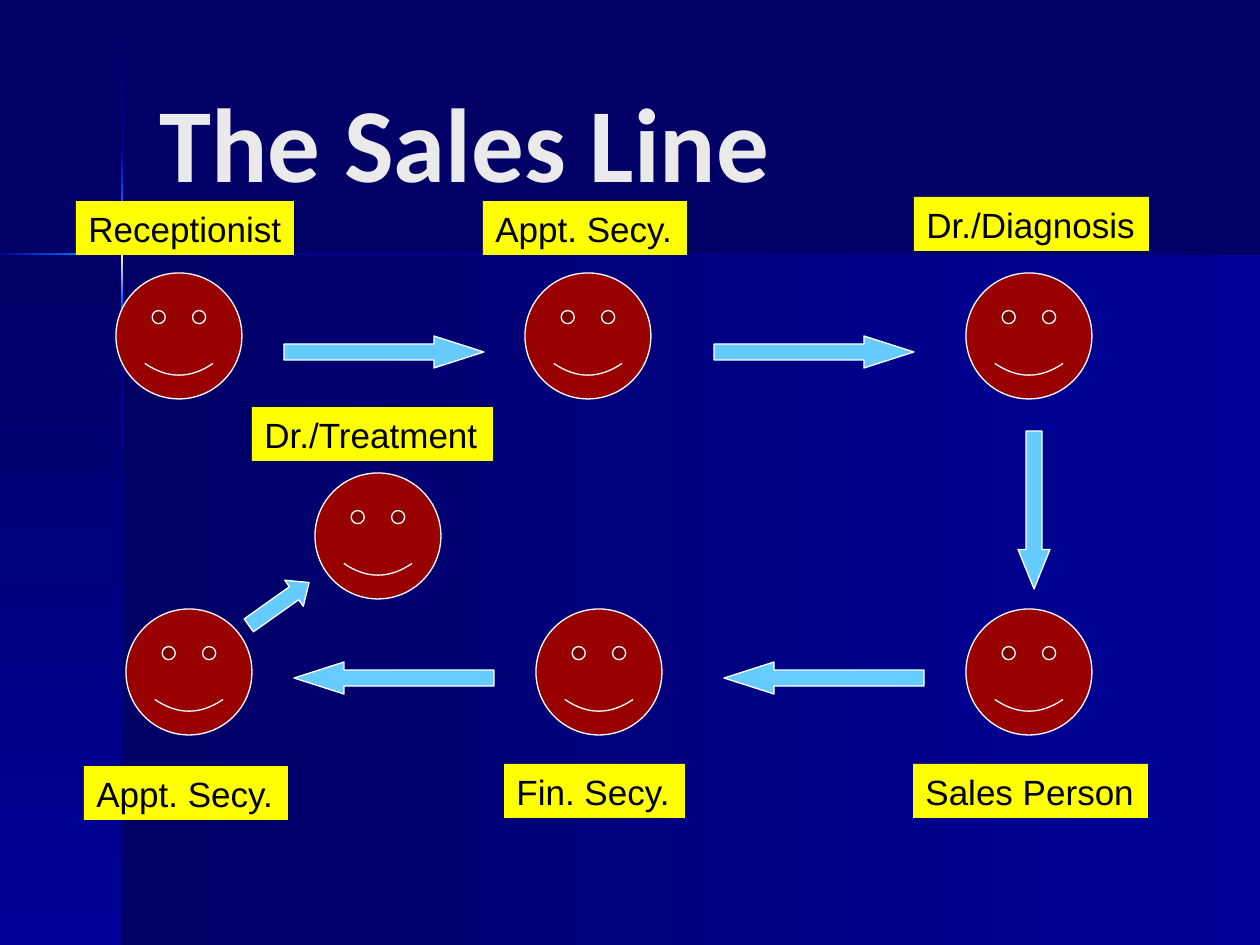
import copy
from itertools import pairwise

import pptx
import pptx.dml.color
import pptx.enum.shapes
import pptx.enum.text
import pptx.util

SHAPES = pptx.enum.shapes.MSO_SHAPE
NAVY, BLUE, GLOW, CREAM = "000066", "000099", "0066FF", "FFFFCC"


def rgb(value):
    return pptx.dml.color.RGBColor.from_string(value)


def px(value):
    return pptx.util.Emu(round(value * 914400 / 126))


class SalesSlide:
    """Hold the deck's style and its current slide, and draw each kind of element."""

    face_size = 126
    label_height = 54
    arrow_height = 32

    def __init__(self):
        self.deck = pptx.Presentation()
        self.deck.slide_width, self.deck.slide_height = px(1260), px(945)
        self.slide = self.deck.slides.add_slide(self.deck.slide_layouts[5])
        background = self.slide.background.fill
        background.solid()
        background.fore_color.rgb = rgb(NAVY)

    def shape(self, kind, left, top, width, height, fill=None, line=None):
        shape = self.slide.shapes.add_shape(kind, px(left), px(top), px(width), px(height))
        shape.shadow.inherit = False
        if fill:
            shape.fill.solid()
            shape.fill.fore_color.rgb = rgb(fill)
        if line:
            shape.line.color.rgb = rgb(line)
            shape.line.width = pptx.util.Pt(0.75)
        else:
            shape.line.fill.background()
        return shape

    def gradient(self, left, top, width, height, colours, vertical):
        fill = self.shape(SHAPES.RECTANGLE, left, top, width, height).fill
        fill.gradient()
        fill.gradient_angle = 270 if vertical else 0
        if len(colours) == 3:
            first = fill.gradient_stops[0]._gs
            first.addnext(copy.deepcopy(first))
        for index, (stop, colour) in enumerate(zip(fill.gradient_stops, colours)):
            stop.position = index / (len(colours) - 1)
            stop.color.rgb = rgb(colour)

    def glow_line(self, across, thickness, bounds, colours, vertical):
        for (start, end), stops in zip(pairwise(bounds), colours):
            if vertical:
                self.gradient(across, start, thickness, end - start, stops, True)
            else:
                self.gradient(start, across, end - start, thickness, stops, False)

    def title(self, text, left, top, width, height):
        title = self.slide.shapes.title
        title.left, title.top, title.width, title.height = map(px, (left, top, width, height))
        frame = title.text_frame
        frame.text = text
        frame.auto_size = pptx.enum.text.MSO_AUTO_SIZE.NONE
        frame.vertical_anchor = pptx.enum.text.MSO_ANCHOR.MIDDLE
        self.format(frame.paragraphs[0], "Calibri", 60, "EAEAEA", True)

    def format(self, paragraph, font, size, colour, bold=False):
        paragraph.alignment = pptx.enum.text.PP_ALIGN.LEFT
        paragraph.font.name = font
        paragraph.font.size = pptx.util.Pt(size)
        paragraph.font.bold = bold
        paragraph.font.color.rgb = rgb(colour)

    def face(self, left, top):
        face = self.shape(SHAPES.SMILEY_FACE, left, top, self.face_size, self.face_size,
                          "990000", "FFFFFF")
        face.adjustments[0] = 0.047

    def label(self, text, left, top, width):
        label = self.shape(SHAPES.RECTANGLE, left, top, width, self.label_height, "FFFF00")
        frame = label.text_frame
        frame.text = text
        frame.word_wrap = False
        frame.margin_right = px(8)
        frame.auto_size = pptx.enum.text.MSO_AUTO_SIZE.SHAPE_TO_FIT_TEXT
        frame.vertical_anchor = pptx.enum.text.MSO_ANCHOR.TOP
        self.format(frame.paragraphs[0], "Arial", 20, "000000")

    def arrow(self, left, top, length, rotation):
        arrow = self.shape(SHAPES.RIGHT_ARROW, left, top, length, self.arrow_height,
                           "66CCFF", "FFFFFF")
        arrow.adjustments[1] = length / self.arrow_height / 4
        arrow.rotation = rotation


def main():
    sales = SalesSlide()

    sales.gradient(122, 255, 1138, 690, [NAVY, BLUE], False)
    sales.gradient(0, 255, 122, 690, [NAVY, BLUE], True)
    flare = [[NAVY, BLUE], [BLUE, GLOW], [GLOW, CREAM, GLOW], [GLOW, BLUE], [BLUE, NAVY]]
    sales.glow_line(121, 2, [1, 152, 208, 300, 355, 945], flare, True)
    sales.glow_line(253, 2, [0, 76, 168, 223, 1260], flare[1:], False)

    sales.title("The Sales Line", 147, 42, 1040, 198)

    roles = [
        ("Receptionist", (116, 273), (76, 201, 218)),
        ("Appt. Secy.", (525, 273), (483, 201, 204)),
        ("Dr./Diagnosis", (966, 273), (914, 197, 235)),
        ("Sales Person", (966, 609), (913, 764, 235)),
        ("Fin. Secy.", (536, 609), (504, 764, 181)),
        ("Appt. Secy.", (126, 609), (84, 766, 204)),
        ("Dr./Treatment", (315, 473), (252, 407, 241)),
    ]
    for role, face_place, label_place in roles:
        sales.face(*face_place)
        sales.label(role, *label_place)

    steps = [
        (284, 336, 200, 0),
        (714, 336, 200, 0),
        (955, 494, 158, 90),
        (724, 662, 200, 180),
        (294, 662, 200, 180),
        (242, 588, 74, 324.6),
    ]
    for step in steps:
        sales.arrow(*step)

    sales.deck.save("out.pptx")


if __name__ == "__main__":
    main()
